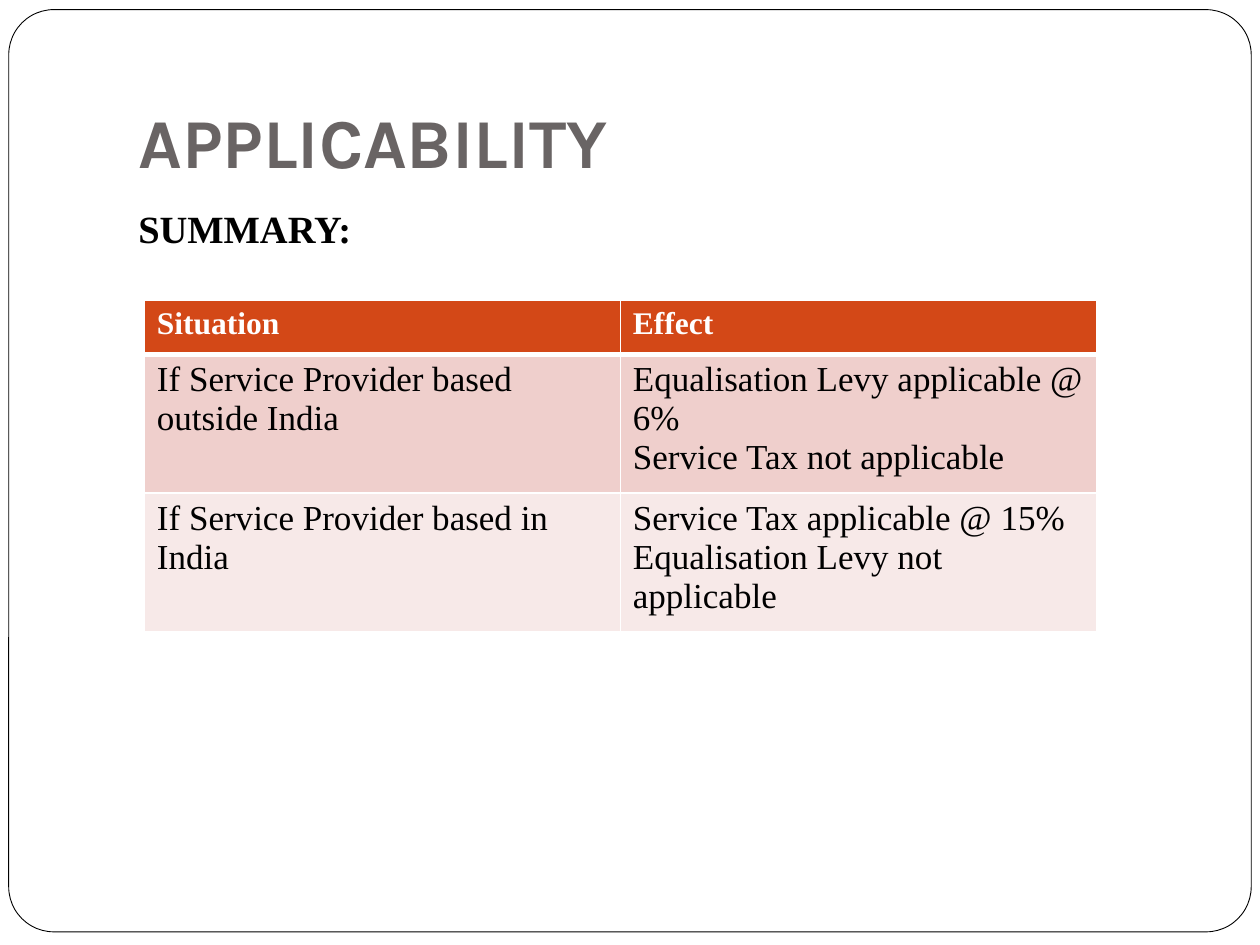
from dataclasses import dataclass

from lxml.etree import SubElement
from pptx import Presentation
from pptx.dml.color import RGBColor
from pptx.enum.shapes import MSO_SHAPE
from pptx.enum.text import MSO_ANCHOR, PP_ALIGN
from pptx.oxml.ns import qn
from pptx.util import Pt


@dataclass(frozen=True)
class Theme:
    """Colours, fonts and type sizes of the slide."""
    white: str = "FFFFFF"
    black: str = "000000"
    title_color: str = "696464"
    header_fill: str = "D34817"
    band_fills: tuple = ("EFCFCC", "F7E9E8")
    title_font: str = "Karla"
    body_font: str = "Times New Roman"
    title_size: float = 40
    summary_size: float = 22
    header_size: float = 18
    cell_size: float = 20


THEME = Theme()
ROWS = [
    ("Situation", "Effect"),
    ("If Service Provider based outside India",
     "Equalisation Levy applicable @ 6%\nService Tax not applicable"),
    ("If Service Provider based in India",
     "Service Tax applicable @ 15%\nEqualisation Levy not applicable"),
]


def style_font(para, name, size, color, bold):
    """Set the font of a whole paragraph."""
    font = para.font
    font.name, font.size, font.bold = name, Pt(size), bold
    font.color.rgb = RGBColor.from_string(color)


def add_frame(page):
    """Draw the rounded outline around the slide."""
    frame = page.shapes.add_shape(
        MSO_SHAPE.ROUNDED_RECTANGLE, Pt(5), Pt(5.5), Pt(710), Pt(527))
    frame.adjustments[0] = 0.049
    frame.shadow.inherit = False
    frame.fill.solid()
    frame.fill.fore_color.rgb = RGBColor.from_string(THEME.white)
    frame.line.color.rgb = RGBColor.from_string(THEME.black)
    frame.line.width = Pt(0.5)


def add_text(page, text, top, height, name, size, color):
    """Add a bold text box in the main column and return its frame."""
    box = page.shapes.add_textbox(Pt(72), Pt(top), Pt(612), Pt(height))
    frame = box.text_frame
    frame.word_wrap = True
    frame.text = text
    style_font(frame.paragraphs[0], name, size, color, True)
    return frame


def set_borders(cell, widths):
    """Give a cell white borders of the given widths by side."""
    properties = cell._tc.get_or_add_tcPr()
    for position, (side, width) in enumerate(widths.items()):
        line = properties.makeelement(qn(f"a:ln{side}"), {"w": str(Pt(width))})
        fill = SubElement(line, qn("a:solidFill"))
        SubElement(fill, qn("a:srgbClr"), val=THEME.white)
        properties.insert(position, line)


def fill_cell(cell, text, row):
    """Write and style one table cell according to its row."""
    header = row == 0
    fill = THEME.header_fill if header else THEME.band_fills[(row - 1) % 2]
    cell.fill.solid()
    cell.fill.fore_color.rgb = RGBColor.from_string(fill)
    cell.text = text
    size = THEME.header_size if header else THEME.cell_size
    color = THEME.white if header else THEME.black
    for para in cell.text_frame.paragraphs:
        style_font(para, THEME.body_font, size, color, header)
    set_borders(cell, {"L": 1, "R": 1, "T": 3 if row == 1 else 1,
                       "B": 3 if header else 1})


def add_summary_table(page):
    """Add the table of situations and effects."""
    table = page.shapes.add_table(
        len(ROWS), 2, Pt(82.5), Pt(171.5), Pt(544), Pt(93)).table
    for row, texts in enumerate(ROWS):
        for column, text in enumerate(texts):
            fill_cell(table.cell(row, column), text, row)


def main():
    """Build and save the deck."""
    deck = Presentation()
    deck.slide_width, deck.slide_height = Pt(720), Pt(540)
    page = deck.slides.add_slide(deck.slide_layouts[6])
    add_frame(page)
    title = add_text(page, "APPLICABILITY", 21.6, 90,
                     THEME.title_font, THEME.title_size, THEME.title_color)
    title.vertical_anchor = MSO_ANCHOR.BOTTOM
    title.margin_bottom = Pt(7.2)
    summary = add_text(page, "SUMMARY:", 113.75, 360,
                       THEME.body_font, THEME.summary_size, THEME.black)
    summary.paragraphs[0].alignment = PP_ALIGN.JUSTIFY
    summary.paragraphs[0].space_before = Pt(5.8)
    add_summary_table(page)
    deck.save("out.pptx")


if __name__ == "__main__":
    main()
